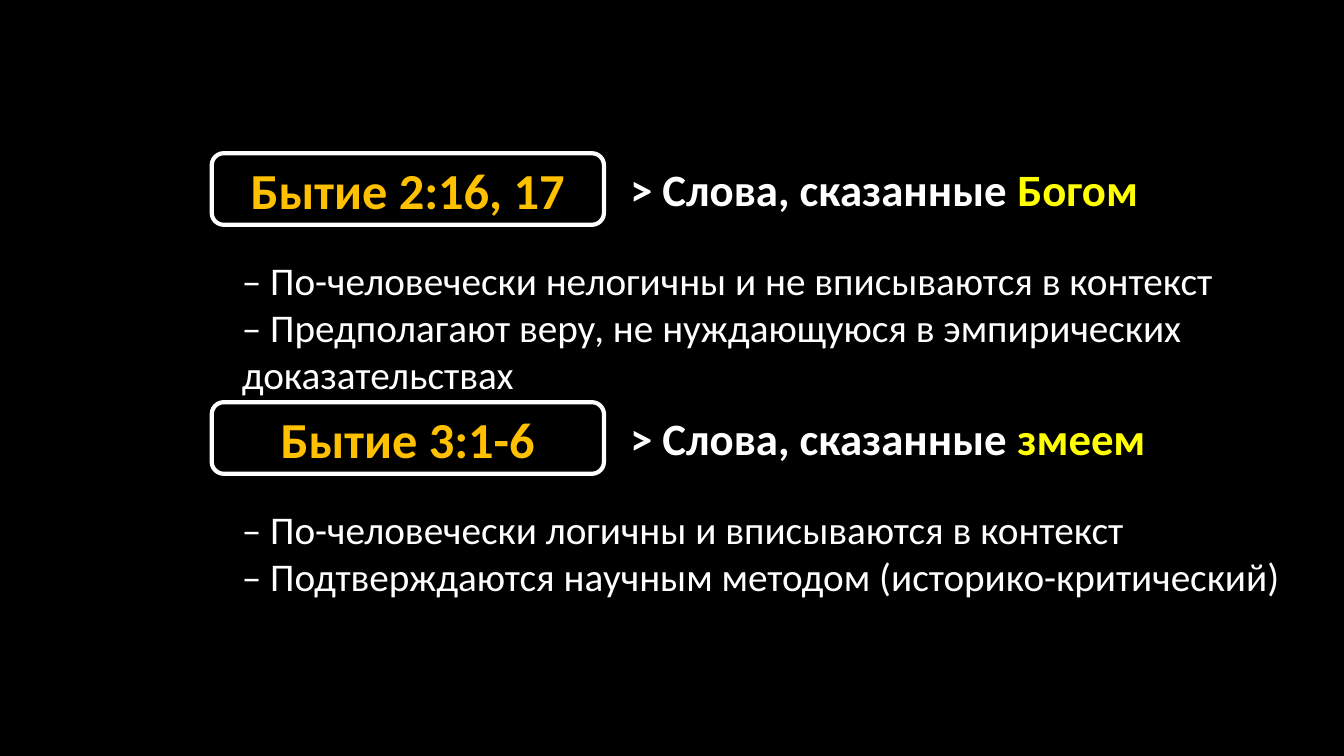
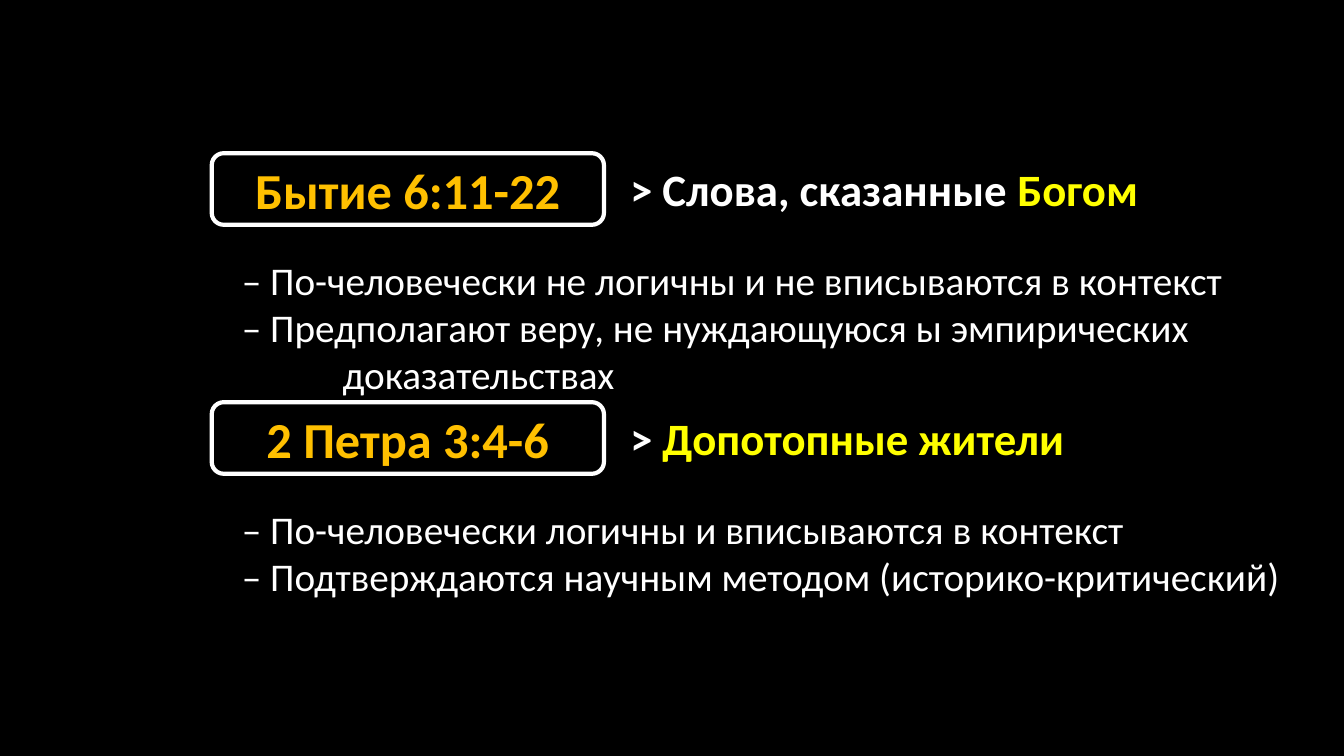
from pptx import Presentation
from pptx.dml.color import RGBColor
from pptx.enum.shapes import MSO_SHAPE
from pptx.enum.text import MSO_ANCHOR, MSO_AUTO_SIZE, PP_ALIGN
from pptx.util import Inches, Pt

FONT = "Calibri"
BLACK, WHITE, GOLD, YELLOW = "000000", "FFFFFF", "FFC000", "FFFF00"
LEFT = 2.1
SECTION_TOPS = (1.52, 3.99)
HANGING = 1.0

LOGICAL = [
    ("– По-человечески логичны и вписываются в контекст", 0),
    ("– Подтверждаются научным методом (историко-критический)", 0),
]
SLIDES = [
    [
        ("Бытие 2:16, 17", "> Слова, сказанные ", "Богом", [
            ("– По-человечески нелогичны и не вписываются в контекст", 0),
            ("– Предполагают веру, не нуждающуюся в эмпирических доказательствах", 0),
        ]),
        ("Бытие 3:1-6", "> Слова, сказанные ", "змеем", LOGICAL),
    ],
    [
        ("Бытие 6:11-22", "> Слова, сказанные ", "Богом", [
            ("– По-человечески не логичны и не вписываются в контекст", 0),
            ("– Предполагают веру, не нуждающуюся ы эмпирических доказательствах", HANGING),
        ]),
        ("2 Петра 3:4-6", "> ", "Допотопные жители", LOGICAL),
    ],
]


def rgb(value):
    """Turn a hex string into a colour."""
    return RGBColor.from_string(value)


def add_run(p, text, size, color, bold=False):
    """Append one styled run to a paragraph."""
    r = p.add_run()
    r.text = text
    r.font.name = FONT
    r.font.size = Pt(size)
    r.font.bold = bold
    r.font.color.rgb = rgb(color)


def add_text_box(s, x, y, w, h):
    """Add a wrapping text box and return its text frame."""
    tf = s.shapes.add_textbox(Inches(x), Inches(y), Inches(w), Inches(h)).text_frame
    tf.word_wrap = True
    tf.auto_size = MSO_AUTO_SIZE.SHAPE_TO_FIT_TEXT
    return tf


def add_points(s, x, y, points):
    """Add the list of statements, with a hanging indent where one is given."""
    tf = add_text_box(s, x, y, 10.55, 1.04)
    for i, (text, indent) in enumerate(points):
        p = tf.add_paragraph() if i else tf.paragraphs[0]
        if indent:
            pPr = p._p.get_or_add_pPr()
            pPr.set("marL", str(Inches(indent)))
            pPr.set("indent", str(-Inches(indent)))
        add_run(p, text, 28, WHITE)


def add_badge(s, x, y, text):
    """Add the rounded frame that holds a verse reference."""
    sp = s.shapes.add_shape(MSO_SHAPE.ROUNDED_RECTANGLE,
                            Inches(x), Inches(y), Inches(3.89), Inches(0.71))
    sp.shadow.inherit = False
    sp.fill.solid()
    sp.fill.fore_color.rgb = rgb(BLACK)
    sp.line.color.rgb = rgb(WHITE)
    sp.line.width = Pt(3)
    sp.text_frame.vertical_anchor = MSO_ANCHOR.MIDDLE
    p = sp.text_frame.paragraphs[0]
    p.alignment = PP_ALIGN.CENTER
    add_run(p, text, 36, GOLD, True)


def add_section(s, x, y, reference, lead, speaker, points):
    """Add a verse reference, its heading and its statements."""
    add_points(s, x + 0.2, y + 0.97, points)
    p = add_text_box(s, x + 4.05, y + 0.04, 5.48, 0.64).paragraphs[0]
    add_run(p, lead, 32, WHITE, True)
    add_run(p, speaker, 32, YELLOW, True)
    add_badge(s, x, y, reference)


def add_comparison(prs, sections):
    """Add a black slide that sets two passages one above the other."""
    s = prs.slides.add_slide(prs.slide_layouts[6])
    s.background.fill.solid()
    s.background.fill.fore_color.rgb = rgb(BLACK)
    for top, section in zip(SECTION_TOPS, sections):
        add_section(s, LEFT, top, *section)


def main():
    """Build and save the presentation."""
    prs = Presentation()
    prs.slide_width, prs.slide_height = Inches(13.33), Inches(7.5)
    for sections in SLIDES:
        add_comparison(prs, sections)
    prs.save("out.pptx")


if __name__ == "__main__":
    main()
